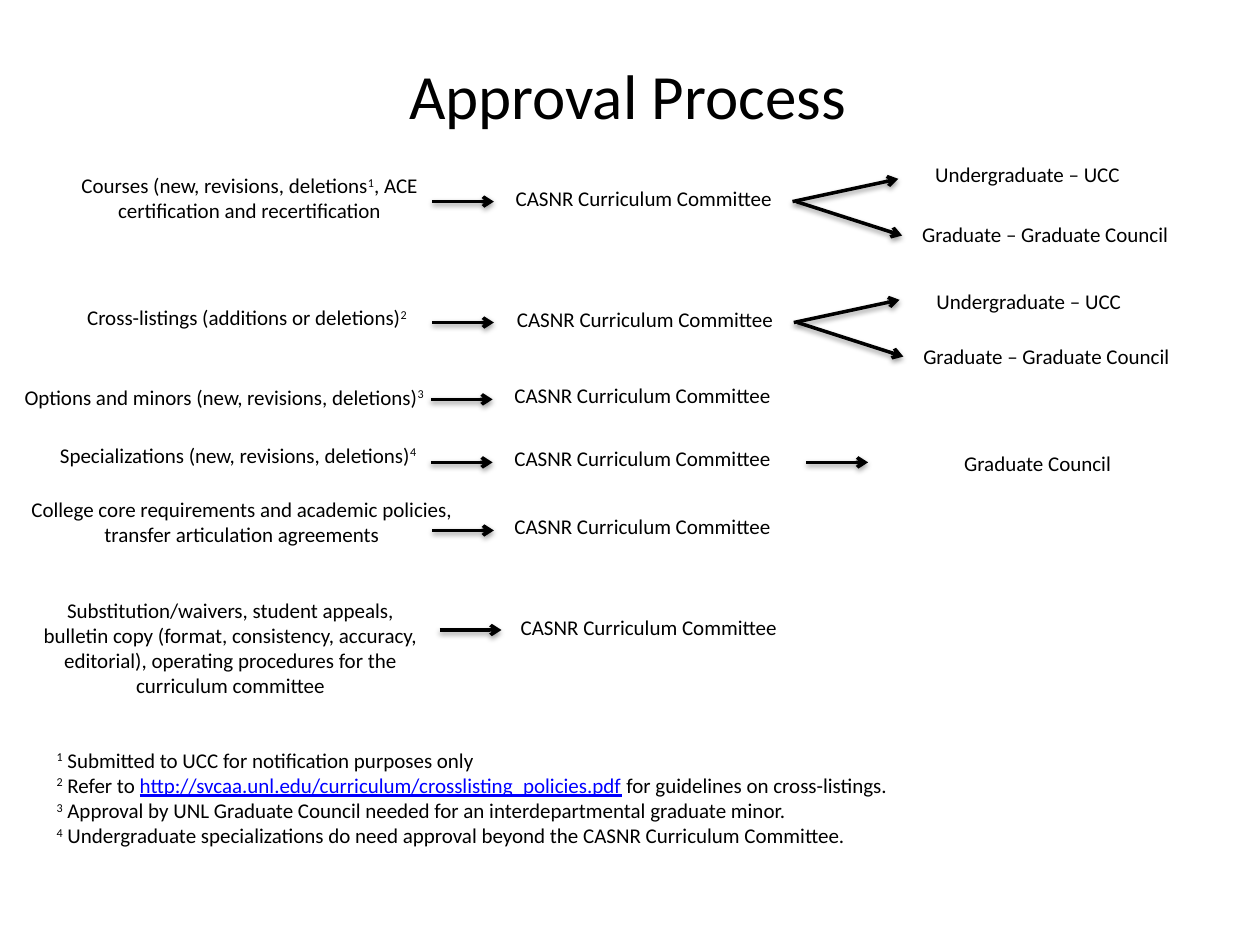
from dataclasses import dataclass

from lxml.etree import SubElement
from pptx import Presentation
from pptx.dml.color import RGBColor
from pptx.enum.shapes import MSO_CONNECTOR
from pptx.enum.text import MSO_ANCHOR, PP_ALIGN
from pptx.oxml.ns import qn
from pptx.util import Inches, Pt

BLACK = RGBColor(0x00, 0x00, 0x00)
LINK_BLUE = RGBColor(0x00, 0x00, 0xFF)
FONT = "Calibri"
COMMITTEE = "CASNR Curriculum Committee"
ARROW_LENGTH = 0.49
LABEL_HEIGHT = 0.3


@dataclass(frozen=True)
class Run:
    text: str
    superscript: bool = False
    link: bool = False


@dataclass(frozen=True)
class Label:
    text: str
    left: float
    top: float
    width: float


@dataclass(frozen=True)
class Arrow:
    x1: float
    y1: float
    x2: float
    y2: float


@dataclass(frozen=True)
class Step:
    """One row of the process: topic, committee, then any final approvals."""
    topic: tuple[Run, ...]
    topic_box: tuple[float, float, float, float]
    committee_at: tuple[float, float]
    arrow_at: tuple[float, float]
    approvals: tuple[Label, ...] = ()
    approval_arrows: tuple[Arrow, ...] = ()


def level_arrow(x: float, y: float) -> Arrow:
    return Arrow(x, y, x + ARROW_LENGTH, y)


def fork(x: float, y: float) -> tuple[Arrow, Arrow]:
    return (Arrow(x, y, x + 0.84, y - 0.18),
            Arrow(x + 0.03, y, x + 0.87, y + 0.27))


def sup(mark: str) -> Run:
    return Run(mark, superscript=True)


STEPS = (
    Step((Run("Courses (new, revisions, deletions"), sup("1"),
          Run(", ACE certification and recertification")),
         (0.17, 1.32, 3.62, 0.47), (3.98, 1.42), (3.43, 1.6),
         (Label("Undergraduate – UCC", 7.31, 1.23, 1.69),
          Label("Graduate – Graduate Council", 7.2, 1.71, 2.19)),
         fork(6.29, 1.6)),
    Step((Run("Cross-listings (additions or deletions)"), sup("2")),
         (0.15, 2.37, 3.62, 0.47), (3.99, 2.38), (3.43, 2.56),
         (Label("Undergraduate – UCC", 7.32, 2.24, 1.69),
          Label("Graduate – Graduate Council", 7.21, 2.68, 2.19)),
         fork(6.3, 2.56)),
    Step((Run("Options and minors (new, revisions, deletions)"), sup("3 ")),
         (-0.02, 3, 3.62, 0.47), (3.97, 2.99), (3.42, 3.17)),
    Step((Run("Specializations (new, revisions, deletions)"), sup("4 ")),
         (0.09, 3.46, 3.62, 0.47), (3.97, 3.49), (3.42, 3.67),
         (Label("Graduate Council", 7.54, 3.53, 1.39),),
         (level_arrow(6.4, 3.67),)),
    Step((Run("College core requirements and academic policies, "
              "transfer articulation agreements"),),
         (0.15, 3.89, 3.54, 0.73), (3.97, 4.03), (3.43, 4.21)),
    Step((Run("Substitution/waivers, student appeals, bulletin copy (format, "
              "consistency, accuracy, editorial), operating procedures for "
              "the curriculum committee"),),
         (0.21, 4.69, 3.24, 0.73), (4.02, 4.83), (3.49, 5)),
)

FOOTNOTES = (
    (sup("1"), Run(" Submitted to UCC for notification purposes only")),
    (sup("2"), Run(" Refer to "),
     Run("http://svcaa.unl.edu/curriculum/crosslisting_policies.pdf", link=True),
     Run(" for guidelines on cross-listings.")),
    (sup("3"), Run(" Approval by UNL Graduate Council needed for an "
                   "interdepartmental graduate minor.")),
    (sup("4"), Run(" Undergraduate specializations do need approval beyond "
                   "the CASNR Curriculum Committee.")),
)


def add_run(p, run: Run, size: float = 12) -> None:
    r = p.add_run()
    r.text = run.text
    font_format = {"name": FONT, "size": Pt(size)}
    if run.link:
        font_format["underline"] = True
    for name, value in font_format.items():
        setattr(r.font, name, value)
    r.font.color.rgb = LINK_BLUE if run.link else BLACK
    if run.superscript:
        r.font._element.set("baseline", "30000")


def add_text(s, box: tuple[float, float, float, float], paragraphs,
             align=PP_ALIGN.CENTER, wrap: bool = True) -> None:
    tf = s.shapes.add_textbox(*map(Inches, box)).text_frame
    tf.word_wrap = wrap
    for i, runs in enumerate(paragraphs):
        p = tf.add_paragraph() if i else tf.paragraphs[0]
        p.alignment = align
        for run in runs:
            add_run(p, run)


def add_label(s, label: Label) -> None:
    box = (label.left, label.top, label.width, LABEL_HEIGHT)
    add_text(s, box, [(Run(label.text),)], wrap=False)


def add_arrow(s, arrow: Arrow) -> None:
    """Draw a line with an open arrowhead and a soft shadow below it."""
    ends = (arrow.x1, arrow.y1, arrow.x2, arrow.y2)
    line = s.shapes.add_connector(MSO_CONNECTOR.STRAIGHT, *map(Inches, ends))
    line.line.width = Pt(2)
    line.line.color.rgb = BLACK
    SubElement(line.line._get_or_add_ln(), qn("a:tailEnd"), type="arrow")
    effects = SubElement(line._element.spPr, qn("a:effectLst"))
    shadow = SubElement(effects, qn("a:outerShdw"), blurRad=str(Pt(3.1)),
                        dist=str(Pt(1.6)), dir="5400000", rotWithShape="0")
    color = SubElement(shadow, qn("a:srgbClr"), val=str(BLACK))
    SubElement(color, qn("a:alpha"), val="38000")


def add_title(s, text: str) -> None:
    title = s.shapes.title
    place = {"left": 0.73, "top": -0.06, "width": 8.5, "height": 1.61}
    for name, value in place.items():
        setattr(title, name, Inches(value))
    tf = title.text_frame
    tf.vertical_anchor = MSO_ANCHOR.MIDDLE
    p = tf.paragraphs[0]
    p.alignment = PP_ALIGN.CENTER
    add_run(p, Run(text), size=36)


def add_step(s, step: Step) -> None:
    add_text(s, step.topic_box, [step.topic])
    add_label(s, Label(COMMITTEE, *step.committee_at, 2.26))
    for label in step.approvals:
        add_label(s, label)
    for arrow in (level_arrow(*step.arrow_at), *step.approval_arrows):
        add_arrow(s, arrow)


def main() -> None:
    prs = Presentation()
    prs.slide_width, prs.slide_height = Inches(10), Inches(7.5)
    s = prs.slides.add_slide(prs.slide_layouts[5])
    add_title(s, "Approval Process")
    for step in STEPS:
        add_step(s, step)
    add_text(s, (0.35, 5.88, 9.49, 0.91), FOOTNOTES, align=PP_ALIGN.LEFT)
    prs.save("out.pptx")


if __name__ == "__main__":
    main()
